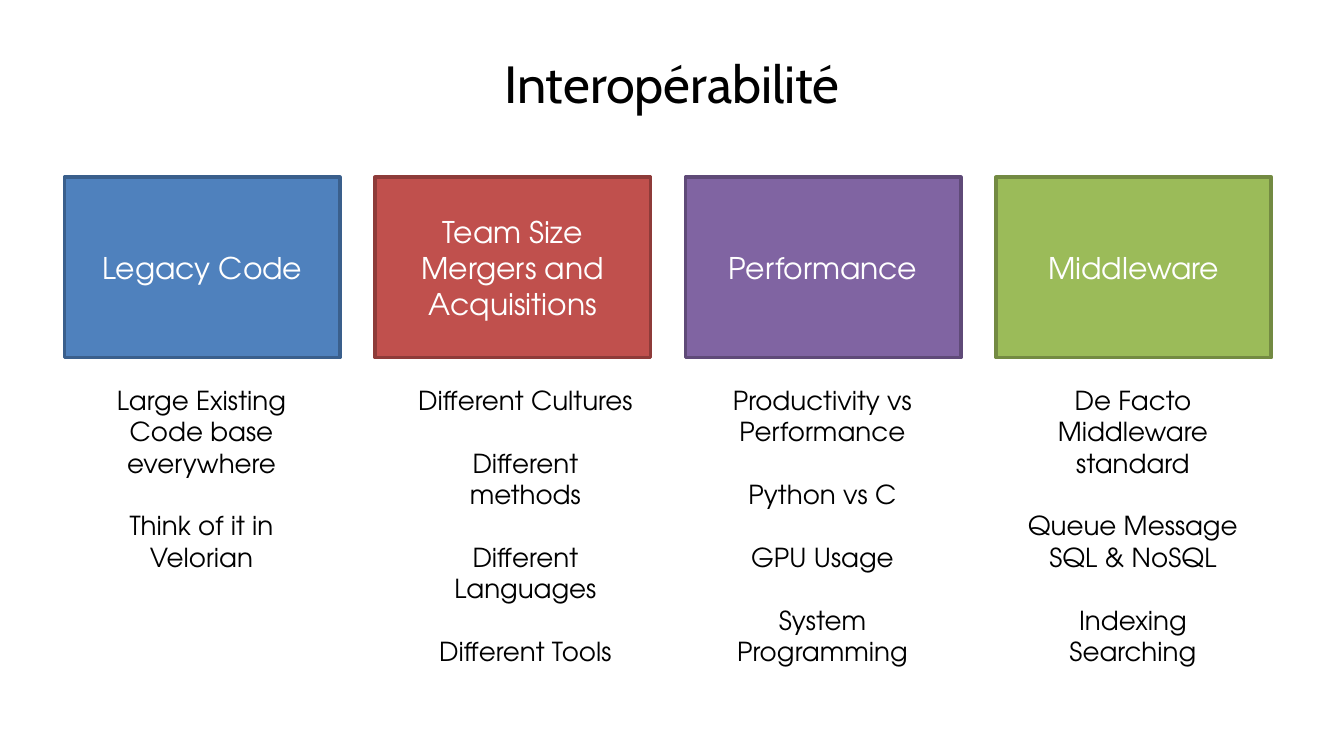
import dataclasses

import pptx
import pptx.dml.color
import pptx.enum.shapes
import pptx.enum.text
import pptx.util

Pt = pptx.util.Pt
Anchor = pptx.enum.text.MSO_ANCHOR
AutoSize = pptx.enum.text.MSO_AUTO_SIZE

BODY_FONT = "TeX Gyre Adventor"
FIRST_LEFT, COLUMN_PITCH = 34.56, 166.32
CARD_TOP, CARD_WIDTH, CARD_HEIGHT = 95.04, 147.6, 96.48
DETAIL_TOP, DETAIL_WIDTH = 202.32, 133.92
GROUP_GAP = 16.8


@dataclasses.dataclass(frozen=True)
class Column:
    heading: list[str]
    groups: list[list[str]]
    fill: str
    border: str
    detail_indent: float = 6.48
    detail_height: float = 193.68


COLUMNS = [
    Column(["Legacy Code"],
           [["Large Existing Code base everywhere"], ["Think of it in Velorian"]],
           "4F81BD", "3A5F8C", detail_height=143.28),
    Column(["Team Size", "Mergers and Acquisitions"],
           [["Different Cultures"], ["Different methods"],
            ["Different Languages"], ["Different Tools"]],
           "C0504D", "8E3B39", detail_indent=13.68),
    Column(["Performance"],
           [["Productivity vs Performance"], ["Python vs C"],
            ["GPU Usage"], ["System Programming"]],
           "8064A2", "5F4A78"),
    Column(["Middleware"],
           [["De Facto Middleware standard"],
            ["Queue Message", "SQL & NoSQL"], ["Indexing Searching"]],
           "9BBB59", "738A42"),
]


def rgb(value: str) -> pptx.dml.color.RGBColor:
    return pptx.dml.color.RGBColor.from_string(value)


def write_groups(frame, groups: list[list[str]], font: str, size: float, color: str) -> None:
    """Write centred paragraphs, with a gap before every group but the first."""
    frame.word_wrap = True
    para = None
    for group in groups:
        for position, text in enumerate(group):
            gap = GROUP_GAP if para is not None and position == 0 else 0
            para = frame.paragraphs[0] if para is None else frame.add_paragraph()
            para.text = text
            para.alignment = pptx.enum.text.PP_ALIGN.CENTER
            para.space_before = Pt(gap)
            para.font.name = font
            para.font.size = Pt(size)
            para.font.color.rgb = rgb(color)


def add_title(page, text: str) -> None:
    title = page.shapes.title
    title.left, title.top, title.width, title.height = Pt(0), Pt(24), Pt(720), Pt(27.36)
    frame = title.text_frame
    frame.auto_size = AutoSize.NONE
    frame.vertical_anchor = Anchor.TOP
    write_groups(frame, [[text]], "Cabin", 28, "000000")


def add_card(page, column: Column, left: float) -> None:
    card = page.shapes.add_shape(
        pptx.enum.shapes.MSO_SHAPE.RECTANGLE,
        Pt(left), Pt(CARD_TOP), Pt(CARD_WIDTH), Pt(CARD_HEIGHT))
    card.shadow.inherit = False
    card.fill.solid()
    card.fill.fore_color.rgb = rgb(column.fill)
    card.line.color.rgb = rgb(column.border)
    card.line.width = Pt(2)
    card.text_frame.vertical_anchor = Anchor.MIDDLE
    write_groups(card.text_frame, [column.heading], BODY_FONT, 16, "FFFFFF")


def add_details(page, column: Column, left: float) -> None:
    """Add the text that explains a card below it."""
    box = page.shapes.add_textbox(
        Pt(left + column.detail_indent), Pt(DETAIL_TOP),
        Pt(DETAIL_WIDTH), Pt(column.detail_height))
    box.text_frame.auto_size = AutoSize.SHAPE_TO_FIT_TEXT
    write_groups(box.text_frame, column.groups, BODY_FONT, 14, "000000")


def main() -> None:
    deck = pptx.Presentation()
    deck.slide_width, deck.slide_height = Pt(720), Pt(405)
    page = deck.slides.add_slide(deck.slide_layouts.get_by_name("Title Only"))
    add_title(page, "Interopérabilité")
    for index, column in enumerate(COLUMNS):
        left = FIRST_LEFT + index * COLUMN_PITCH
        add_card(page, column, left)
        add_details(page, column, left)
    deck.save("out.pptx")


if __name__ == "__main__":
    main()
